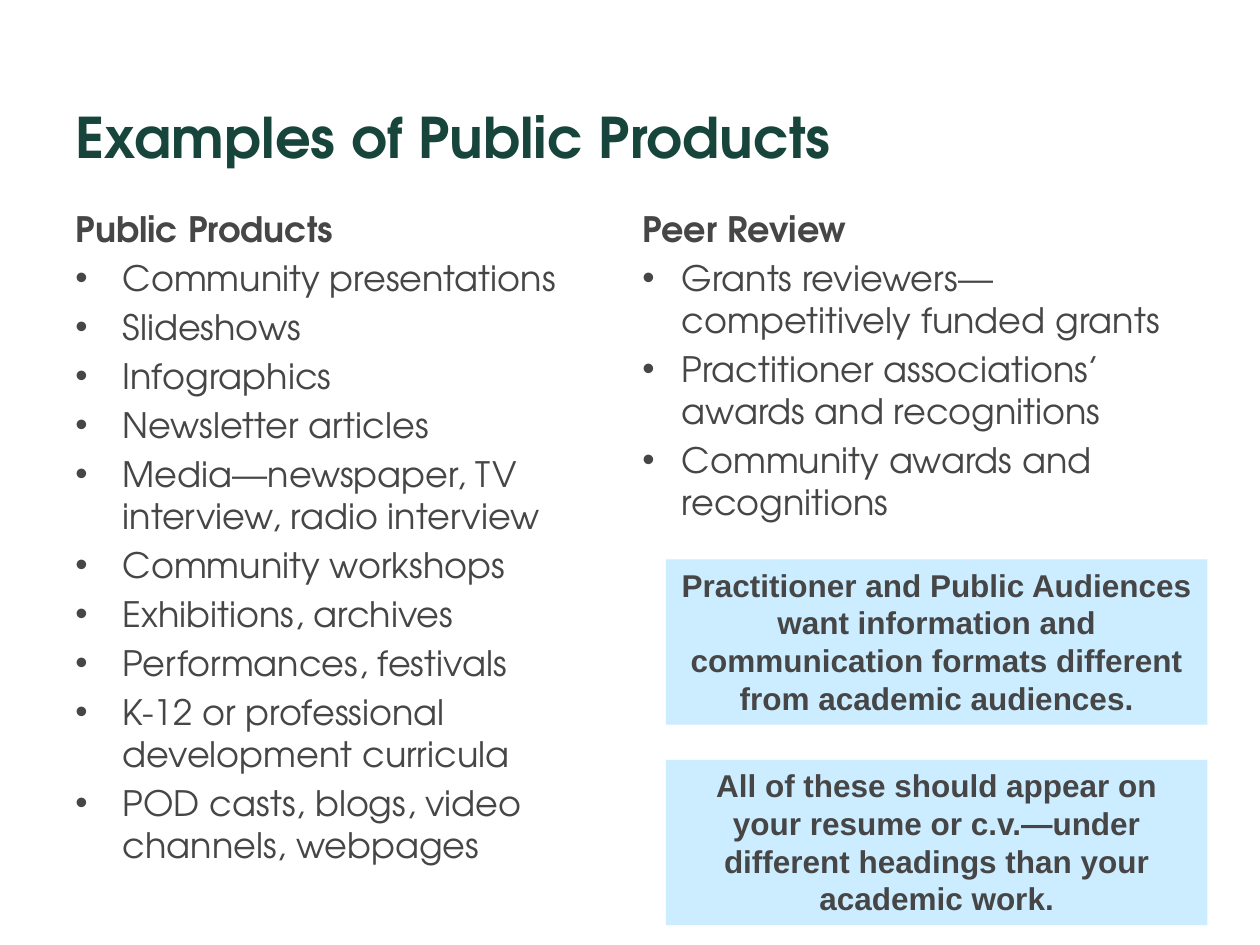
"""Build the slide listing examples of public products and their peer review."""
from dataclasses import dataclass

from lxml import etree
from pptx import Presentation
from pptx.dml.color import RGBColor
from pptx.enum.shapes import MSO_SHAPE
from pptx.enum.text import MSO_ANCHOR, PP_ALIGN
from pptx.oxml.ns import qn
from pptx.util import Pt

RECTANGLE = MSO_SHAPE.RECTANGLE
TOP, MIDDLE = MSO_ANCHOR.TOP, MSO_ANCHOR.MIDDLE
CENTER = PP_ALIGN.CENTER
HEADING_FONT, CALLOUT_FONT = "TeX Gyre Adventor", "Arial"
GREEN, GRAY, PALE_BLUE = "18453B", "464646", "CCECFF"


@dataclass(frozen=True)
class Column:
    """A heading with a bulleted list; lengths in points."""
    left: float
    width: float
    height: float
    indent: float
    heading: str
    items: tuple[str, ...]


@dataclass(frozen=True)
class Callout:
    """A shaded remark; top in points."""
    top: float
    message: str


COLUMNS = (
    Column(36, 330.5, 402.5, 27, "Public Products", (
        "Community presentations",
        "Slideshows",
        "Infographics",
        "Newsletter articles",
        "Media—newspaper, TV interview, radio interview",
        "Community workshops",
        "Exhibitions, archives",
        "Performances, festivals",
        "K-12 or professional development curricula",
        "POD casts, blogs, video channels, webpages",
    )),
    Column(360, 318, 311, 22.5, "Peer Review", (
        "Grants reviewers—competitively funded grants",
        "Practitioner associations’ awards and recognitions",
        "Community awards and recognitions",
    )),
)
CALLOUTS = (
    Callout(319.7, "Practitioner and Public Audiences want information and "
                   "communication formats different from academic audiences."),
    Callout(434.2, "All of these should appear on your resume or c.v.—under "
                   "different headings than your academic work."),
)


def color(code: str) -> RGBColor:
    """Turn a hex string into a colour."""
    return RGBColor.from_string(code)


def style(paragraph, size: float, face: str, ink: str, bold: bool = True) -> None:
    """Format every run of a paragraph."""
    for run in paragraph.runs:
        run.font.size = Pt(size)
        run.font.name = face
        run.font.bold = bold
        run.font.color.rgb = color(ink)


def add_bullet(paragraph, indent: float) -> None:
    """Give a paragraph a round bullet and a hanging indent."""
    properties = paragraph._p.get_or_add_pPr()
    properties.set("marL", str(Pt(indent)))
    properties.set("indent", str(-Pt(indent)))
    etree.SubElement(properties, qn("a:buFont")).set("typeface", CALLOUT_FONT)
    etree.SubElement(properties, qn("a:buChar")).set("char", "•")


def draw_title(slide, title: str) -> None:
    """Draw the slide title."""
    frame = slide.shapes.add_textbox(Pt(36), Pt(54), Pt(648), Pt(48)).text_frame
    frame.word_wrap = True
    frame.vertical_anchor = MIDDLE
    frame.text = title
    style(frame.paragraphs[0], 32, HEADING_FONT, GREEN)


def draw_column(slide, column: Column) -> None:
    """Draw a heading and its bulleted items."""
    frame = slide.shapes.add_textbox(
        Pt(column.left), Pt(115.2), Pt(column.width), Pt(column.height)).text_frame
    frame.word_wrap = True
    frame.text = column.heading
    style(frame.paragraphs[0], 20, HEADING_FONT, GRAY)
    for item in column.items:
        entry = frame.add_paragraph()
        entry.text = item
        entry.space_before = Pt(4)
        add_bullet(entry, column.indent)
        style(entry, 20, HEADING_FONT, GRAY, bold=False)


def draw_callout(slide, callout: Callout) -> None:
    """Draw a shaded box with a centred remark."""
    panel = slide.shapes.add_shape(
        RECTANGLE, Pt(380.5), Pt(callout.top), Pt(309.5), Pt(94.5))
    panel.shadow.inherit = False
    panel.fill.solid()
    panel.fill.fore_color.rgb = color(PALE_BLUE)
    panel.line.fill.background()
    frame = panel.text_frame
    frame.word_wrap = True
    frame.vertical_anchor = TOP
    frame.text = callout.message
    remark = frame.paragraphs[0]
    remark.alignment = CENTER
    style(remark, 18, CALLOUT_FONT, GRAY)


def main() -> None:
    """Build and save the presentation."""
    presentation = Presentation()
    presentation.slide_width, presentation.slide_height = Pt(720), Pt(540)
    slide = presentation.slides.add_slide(presentation.slide_layouts[6])
    draw_title(slide, "Examples of Public Products")
    for column in COLUMNS:
        draw_column(slide, column)
    for callout in CALLOUTS:
        draw_callout(slide, callout)
    presentation.save("out.pptx")


if __name__ == "__main__":
    main()
